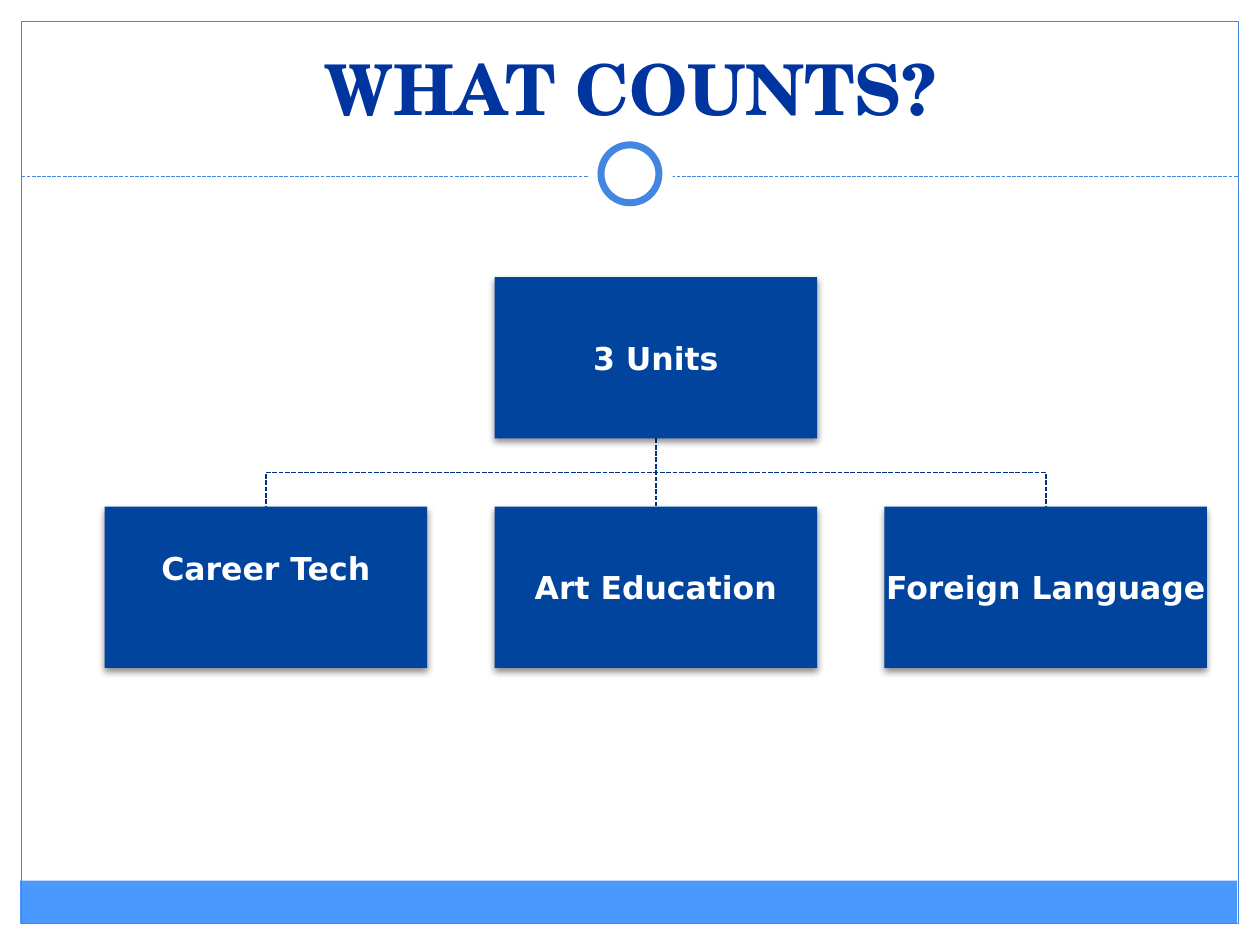
"""Build the WHAT COUNTS? slide with its chart of three units."""
from lxml.etree import SubElement
from pptx import Presentation
from pptx.dml.color import RGBColor
from pptx.enum.dml import MSO_LINE
from pptx.enum.shapes import MSO_CONNECTOR, MSO_SHAPE
from pptx.enum.text import MSO_ANCHOR, PP_ALIGN
from pptx.oxml.ns import qn
from pptx.util import Inches, Pt

WHITE = RGBColor(0xFF, 0xFF, 0xFF)
FRAME_BLUE = RGBColor(0x42, 0x86, 0xE1)
BAR_BLUE = RGBColor(0x4B, 0x98, 0xFF)
TITLE_BLUE = RGBColor(0x00, 0x34, 0x9E)
BOX_BLUE = RGBColor(0x00, 0x44, 0x9E)
LINK_BLUE = RGBColor(0x00, 0x36, 0x7F)

BOX_WIDTH, BOX_HEIGHT = 2.56, 1.28
BOX_LEFTS = [0.83 + 3.095 * column for column in range(3)]
TOP_ROW, BOTTOM_ROW = 2.2, 4.02


def write_text(shape, text, *, font, size, color, anchor, inset, bottom):
    frame = shape.text_frame
    frame.word_wrap = True
    frame.vertical_anchor = anchor
    frame.margin_left = frame.margin_right = frame.margin_top = Inches(inset)
    frame.margin_bottom = Inches(bottom)
    paragraph = frame.paragraphs[0]
    paragraph.alignment = PP_ALIGN.CENTER
    run = paragraph.add_run()
    run.text = text
    run.font.name = font
    run.font.size = Pt(size)
    run.font.bold = True
    run.font.color.rgb = color


def style_line(shape, color, width, dash=None):
    shape.line.color.rgb = color
    shape.line.width = Pt(width)
    if dash:
        shape.line.dash_style = dash
    properties = shape._element.spPr
    if properties.find(qn("a:effectLst")) is None:
        SubElement(properties, qn("a:effectLst"))


presentation = Presentation()
presentation.slide_width = Inches(10)
presentation.slide_height = Inches(7.5)
slide = presentation.slides.add_slide(presentation.slide_layouts[6])
shapes = slide.shapes

bar = shapes.add_shape(MSO_SHAPE.RECTANGLE, Inches(0.16), Inches(6.99), Inches(9.66), Inches(0.34))
bar.shadow.inherit = False
bar.fill.solid()
bar.fill.fore_color.rgb = BAR_BLUE
bar.line.fill.background()

border = shapes.add_shape(MSO_SHAPE.RECTANGLE, Inches(0.17), Inches(0.17), Inches(9.66), Inches(7.16))
border.fill.background()
style_line(border, FRAME_BLUE, 0.75)

divider = shapes.add_connector(MSO_CONNECTOR.STRAIGHT, Inches(0.17), Inches(1.4), Inches(9.83), Inches(1.4))
style_line(divider, FRAME_BLUE, 0.75, MSO_LINE.SQUARE_DOT)

for left, top, diameter, line_width in [(4.67, 1.05, 0.67, 0), (4.77, 1.15, 0.46, 4)]:
    circle = shapes.add_shape(MSO_SHAPE.OVAL, Inches(left), Inches(top), Inches(diameter), Inches(diameter))
    circle.shadow.inherit = False
    circle.fill.solid()
    circle.fill.fore_color.rgb = WHITE
    if line_width:
        style_line(circle, FRAME_BLUE, line_width)
    else:
        circle.line.fill.background()

title = shapes.add_textbox(Inches(0.63), Inches(0.33), Inches(8.75), Inches(0.75))
write_text(title, "WHAT COUNTS?", font="TeX Gyre Schola", size=40, color=TITLE_BLUE,
           anchor=MSO_ANCHOR.BOTTOM, inset=0.1, bottom=0.05)

left_center, middle_center, right_center = [left + BOX_WIDTH / 2 for left in BOX_LEFTS]
link_top = TOP_ROW + BOX_HEIGHT
link_middle = (link_top + BOTTOM_ROW) / 2
for center in (right_center, left_center):
    builder = shapes.build_freeform(Inches(middle_center), Inches(link_top))
    corners = [(middle_center, link_middle), (center, link_middle), (center, BOTTOM_ROW)]
    builder.add_line_segments([(Inches(x), Inches(y)) for x, y in corners], close=False)
    elbow = builder.convert_to_shape()
    elbow.fill.background()
    style_line(elbow, LINK_BLUE, 0.9, MSO_LINE.SQUARE_DOT)
stem = shapes.add_connector(MSO_CONNECTOR.STRAIGHT, Inches(middle_center), Inches(link_top),
                            Inches(middle_center), Inches(BOTTOM_ROW))
style_line(stem, LINK_BLUE, 0.9, MSO_LINE.SQUARE_DOT)

boxes = [
    ("3 Units", BOX_LEFTS[1], TOP_ROW, 0.01),
    ("Career Tech", BOX_LEFTS[0], BOTTOM_ROW, 0.31),
    ("Art Education", BOX_LEFTS[1], BOTTOM_ROW, 0.01),
    ("Foreign Language", BOX_LEFTS[2], BOTTOM_ROW, 0.01),
]
for text, left, top, bottom in boxes:
    box = shapes.add_shape(MSO_SHAPE.RECTANGLE, Inches(left), Inches(top), Inches(BOX_WIDTH), Inches(BOX_HEIGHT))
    box.fill.solid()
    box.fill.fore_color.rgb = BOX_BLUE
    box.line.fill.background()
    box.shadow.inherit = False
    effects = box._element.spPr.find(qn("a:effectLst"))
    shadow = SubElement(effects, qn("a:outerShdw"), blurRad=str(Pt(4)), dist=str(Pt(2)),
                        dir="5400000", rotWithShape="0")
    shadow_color = SubElement(shadow, qn("a:srgbClr"), val="000000")
    SubElement(shadow_color, qn("a:alpha"), val="45000")
    write_text(box, text, font="DejaVu Sans", size=18, color=WHITE,
               anchor=MSO_ANCHOR.MIDDLE, inset=0.01, bottom=bottom)

presentation.save("out.pptx")
